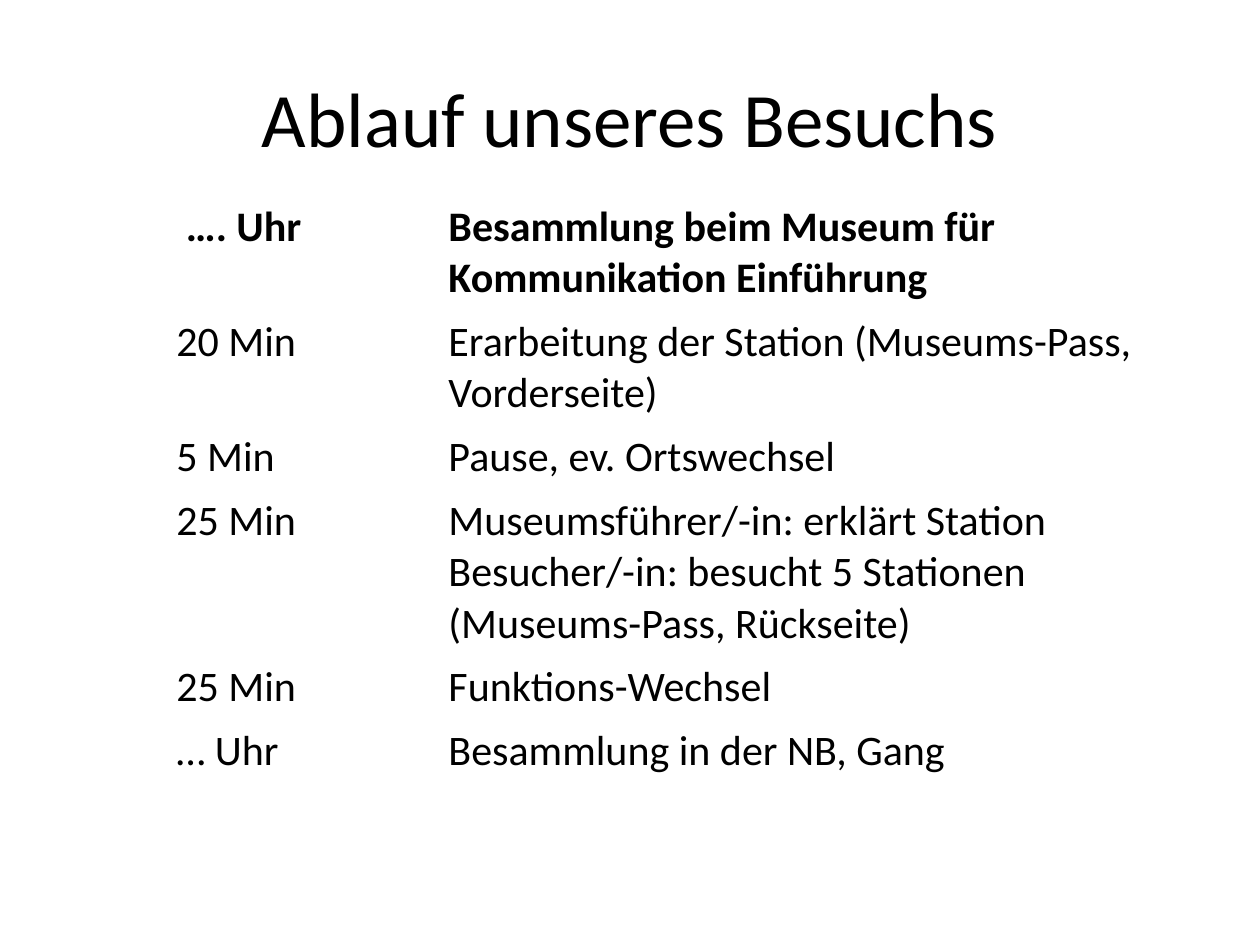
from dataclasses import dataclass

from lxml.etree import SubElement
from pptx import Presentation
from pptx.dml.color import RGBColor
from pptx.enum.text import MSO_ANCHOR, PP_ALIGN
from pptx.oxml.ns import qn
from pptx.util import Pt


@dataclass(frozen=True)
class Theme:
    font: str = "Calibri"
    text: str = "000000"
    border: str = "FFFFFF"
    title_size: int = 44
    body_size: int = 24
    thin: int = 1
    thick: int = 3


SCHEDULE = [
    (" …. Uhr", "Besammlung beim Museum für Kommunikation Einführung"),
    ("20 Min", "Erarbeitung der Station (Museums-Pass, Vorderseite)"),
    ("5 Min", "Pause, ev. Ortswechsel"),
    ("25 Min", "Museumsführer/-in: erklärt Station\n"
               "Besucher/-in: besucht 5 Stationen (Museums-Pass, Rückseite)"),
    ("25 Min", "Funktions-Wechsel"),
    ("… Uhr", "Besammlung in der NB, Gang"),
]
LINES_PER_ROW = [2, 2, 1, 3, 1, 1]
LINE_HEIGHT = 29.3
CELL_PADDING = 7.2


class SlideBuilder:
    """Holds the theme and the slide being filled."""

    def __init__(self, prs, theme):
        self.theme = theme
        self.s = prs.slides.add_slide(prs.slide_layouts[6])

    def style(self, tf, size, bold=False, align=PP_ALIGN.LEFT):
        for p in tf.paragraphs:
            p.alignment = align
            p.font.name = self.theme.font
            p.font.size = Pt(size)
            p.font.bold = bold
            p.font.color.rgb = RGBColor.from_string(self.theme.text)

    def title(self, text, x, y, w, h):
        tf = self.s.shapes.add_textbox(Pt(x), Pt(y), Pt(w), Pt(h)).text_frame
        tf.word_wrap = True
        tf.vertical_anchor = MSO_ANCHOR.MIDDLE
        tf.text = text
        self.style(tf, self.theme.title_size, align=PP_ALIGN.CENTER)

    def borders(self, cell, header):
        tc_pr = cell._tc.get_or_add_tcPr()
        for side in "LRTB":
            width = self.theme.thick if header and side == "B" else self.theme.thin
            ln = SubElement(tc_pr, qn(f"a:ln{side}"), w=str(Pt(width)))
            fill = SubElement(ln, qn("a:solidFill"))
            SubElement(fill, qn("a:srgbClr"), val=self.theme.border)

    def table(self, rows, x, y, widths, heights):
        """Add a table without fills whose first row is bold."""
        table = self.s.shapes.add_table(
            len(rows), len(widths), Pt(x), Pt(y), Pt(sum(widths)), Pt(sum(heights))
        ).table
        for column, width in zip(table.columns, widths):
            column.width = Pt(width)
        for i, (row, height) in enumerate(zip(rows, heights)):
            table.rows[i].height = Pt(height)
            for j, text in enumerate(row):
                cell = table.cell(i, j)
                cell.text = text
                self.style(cell.text_frame, self.theme.body_size, bold=i == 0)
                self.borders(cell, header=i == 0)
                cell.fill.background()


def main():
    prs = Presentation()
    prs.slide_width, prs.slide_height = Pt(720), Pt(540)
    slide = SlideBuilder(prs, Theme())
    slide.title("Ablauf unseres Besuchs", 36, 21.6, 648, 90)
    heights = [n * LINE_HEIGHT + CELL_PADDING for n in LINES_PER_ROW]
    slide.table(SCHEDULE, 93.6, 111.6, [155.5, 417], heights)
    prs.save("out.pptx")


if __name__ == "__main__":
    main()
